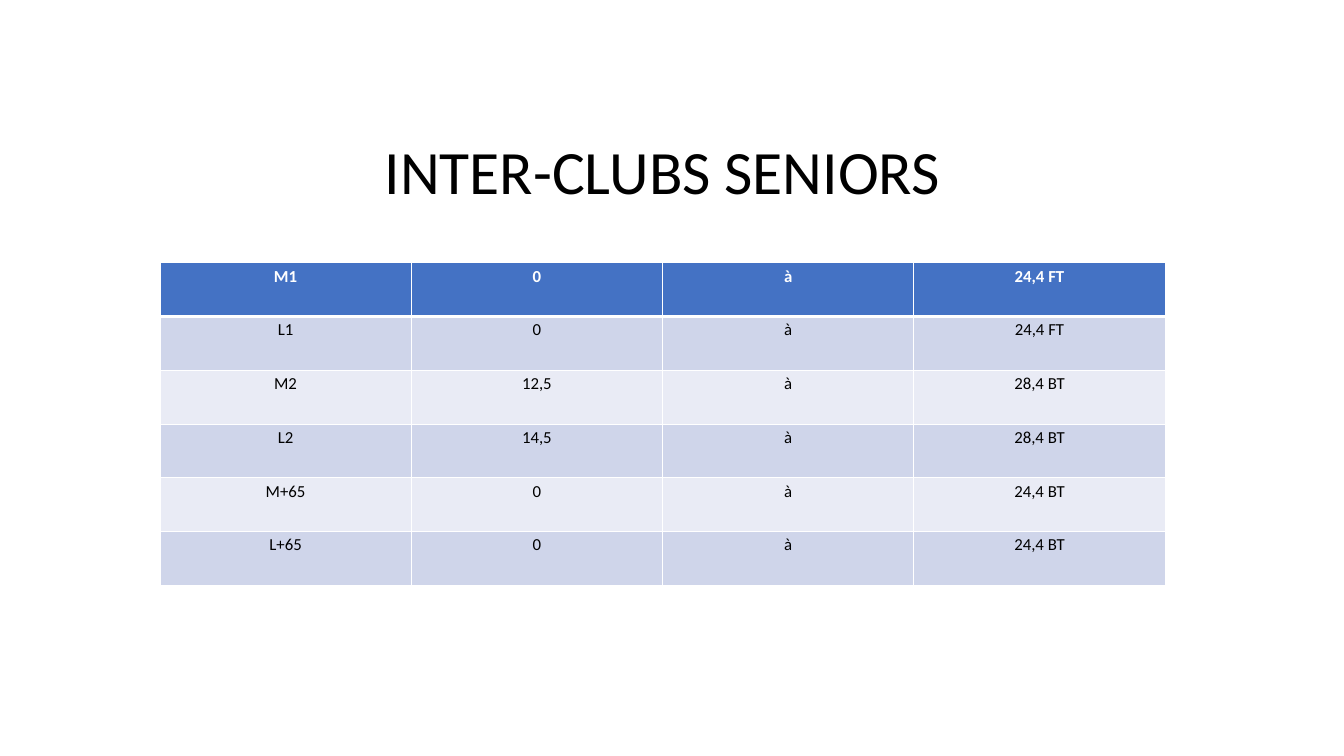
import pptx
import pptx.dml.color
import pptx.enum.text
import pptx.oxml
import pptx.oxml.ns
import pptx.util
from typing import NamedTuple

SLIDE_WIDTH = pptx.util.Inches(20)
SLIDE_HEIGHT = pptx.util.Inches(11.25)
FONT = "Calibri"
COLORS = {
    "header": "4472C4",
    "odd": "CFD5EA",
    "even": "E9EBF5",
    "light": "FFFFFF",
    "dark": "000000",
}


class Team(NamedTuple):
    name: str
    lowest: str
    link: str
    highest: str


class Area(NamedTuple):
    """Lengths as percentages of the slide's width and height."""
    left: float
    top: float
    width: float
    height: float

    def box(self) -> list[int]:
        sides = (SLIDE_WIDTH, SLIDE_HEIGHT, SLIDE_WIDTH, SLIDE_HEIGHT)
        return [round(share * side / 100) for share, side in zip(self, sides)]


TITLE_AREA = Area(11.9, 13.51, 74.8, 19.29)
TEAMS_AREA = Area(11.9, 34.76, 74.8, 42.67)
TEAMS = [
    Team("M1", "0", "à", "24,4 FT"),
    Team("L1", "0", "à", "24,4 FT"),
    Team("M2", "12,5", "à", "28,4 BT"),
    Team("L2", "14,5", "à", "28,4 BT"),
    Team("M+65", "0", "à", "24,4 BT"),
    Team("L+65", "0", "à", "24,4 BT"),
]


def style_paragraph(paragraph, size: float, color: str, bold: bool = False) -> None:
    paragraph.alignment = pptx.enum.text.PP_ALIGN.CENTER
    paragraph.font.name = FONT
    paragraph.font.size = pptx.util.Pt(size)
    paragraph.font.bold = bold
    paragraph.font.color.rgb = pptx.dml.color.RGBColor.from_string(COLORS[color])


def add_title(slide, text: str) -> None:
    frame = slide.shapes.add_textbox(*TITLE_AREA.box()).text_frame
    frame.word_wrap = True
    frame.vertical_anchor = pptx.enum.text.MSO_ANCHOR.MIDDLE
    heading = frame.paragraphs[0]
    heading.text = text
    heading.line_spacing = 0.9
    style_paragraph(heading, 66, "dark")


def set_borders(cell, top: float, bottom: float) -> None:
    properties = cell._tc.get_or_add_tcPr()
    for side, points in (("L", 1), ("R", 1), ("T", top), ("B", bottom)):
        properties.append(pptx.oxml.parse_xml(
            f'<a:ln{side} {pptx.oxml.ns.nsdecls("a")} w="{pptx.util.Pt(points)}">'
            f'<a:solidFill><a:srgbClr val="{COLORS["light"]}"/></a:solidFill>'
            f'</a:ln{side}>'))


def add_teams(slide, teams: list[Team]) -> None:
    left, top, width, height = TEAMS_AREA.box()
    table = slide.shapes.add_table(
        len(teams), len(Team._fields), left, top, width, height).table
    for row, team in enumerate(teams):
        is_header = row == 0
        band = "header" if is_header else ("odd" if row % 2 else "even")
        for column, value in enumerate(team):
            cell = table.cell(row, column)
            cell.text = value
            style_paragraph(cell.text_frame.paragraphs[0], 18,
                            "light" if is_header else "dark", is_header)
            # The rule under the header is thicker than the others
            set_borders(cell, top=3 if row == 1 else 1, bottom=3 if is_header else 1)
            cell.fill.solid()
            cell.fill.fore_color.rgb = pptx.dml.color.RGBColor.from_string(COLORS[band])


def main() -> None:
    deck = pptx.Presentation()
    deck.slide_width, deck.slide_height = SLIDE_WIDTH, SLIDE_HEIGHT
    slide = deck.slides.add_slide(deck.slide_layouts[6])

    # Heading
    add_title(slide, "INTER-CLUBS SENIORS")

    # Handicap range of each team
    add_teams(slide, TEAMS)

    deck.save("out.pptx")


if __name__ == "__main__":
    main()
